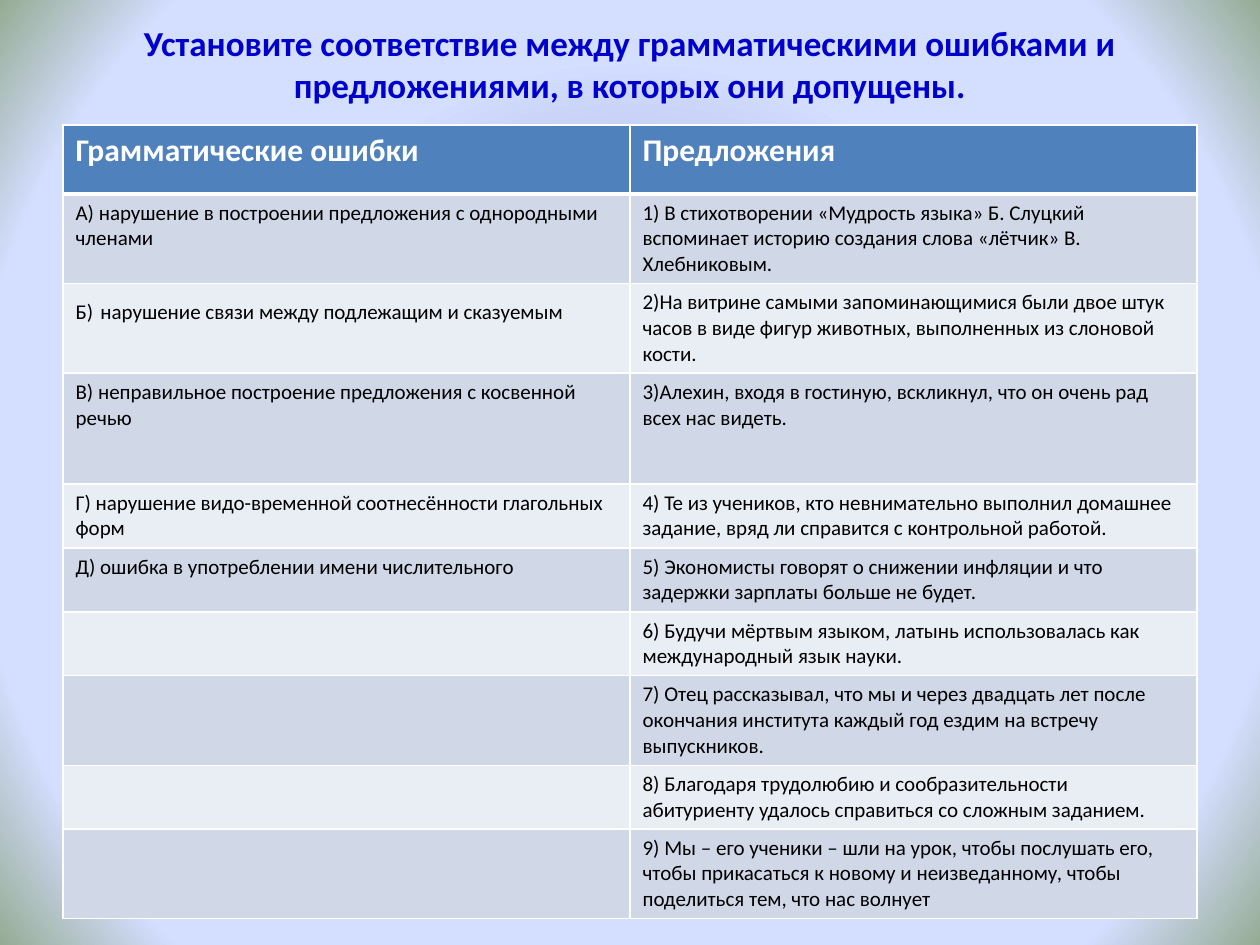
"""Build a matching-exercise slide: grammar errors beside example sentences."""
from dataclasses import dataclass

from lxml.etree import SubElement
from pptx import Presentation
from pptx.dml.color import RGBColor
from pptx.enum.text import MSO_ANCHOR as Anchor, PP_ALIGN as Align
from pptx.oxml import parse_xml
from pptx.oxml.ns import nsdecls, qn
from pptx.util import Pt

FONT = "Calibri"
WHITE, BLACK, BLUE, HEADER_BLUE = "FFFFFF", "000000", "0000CC", "4F81BD"
BANDS = ("D0D8E8", "E9EDF4")
THREE_LINES, TWO_LINES = 51.2, 36.5


@dataclass(frozen=True)
class Style:
    size: float
    color: str
    bold: bool = False


@dataclass(frozen=True)
class Match:
    error: tuple[str, ...]
    sentence: str
    height: float


TITLE = Style(20, BLUE, True)
HEADING = Style(18, WHITE, True)
BODY = Style(12, BLACK)
WIDE_SPACE = Style(18, BLACK)

MATCHES = (
    Match(("А) нарушение в построении предложения с однородными членами",),
          "1) В стихотворении «Мудрость языка» Б. Слуцкий вспоминает историю "
          "создания слова «лётчик» В. Хлебниковым.", THREE_LINES),
    Match(("Б)", " ", "нарушение связи между подлежащим и сказуемым"),
          "2)На витрине самыми запоминающимися были двое штук часов в виде "
          "фигур животных, выполненных из слоновой кости.", THREE_LINES),
    Match(("В) неправильное построение предложения с косвенной речью",),
          "3)Алехин, входя в гостиную, вскликнул, что он очень рад всех нас "
          "видеть.", 63.4),
    Match(("Г) нарушение видо-временной соотнесённости глагольных форм",),
          "4) Те из учеников, кто невнимательно выполнил домашнее задание, "
          "вряд ли справится с контрольной работой.", TWO_LINES),
    Match(("Д) ошибка в употреблении имени числительного",),
          "5) Экономисты говорят о снижении инфляции и что задержки зарплаты "
          "больше не будет.", TWO_LINES),
    Match((), "6) Будучи мёртвым языком, латынь использовалась как "
          "международный язык науки.", TWO_LINES),
    Match((), "7) Отец рассказывал, что мы и через двадцать лет после "
          "окончания института каждый год ездим на встречу выпускников.",
          THREE_LINES),
    Match((), "8) Благодаря трудолюбию и сообразительности абитуриенту "
          "удалось справиться со сложным заданием.", TWO_LINES),
    Match((), "9) Мы – его ученики – шли на урок, чтобы послушать его, чтобы "
          "прикасаться к новому и неизведанному, чтобы поделиться тем, что "
          "нас волнует", THREE_LINES),
)


def rgb(color: str) -> RGBColor:
    return RGBColor.from_string(color)


def add_run(paragraph, text: str, style: Style) -> None:
    run = paragraph.add_run()
    run.text = text
    run.font.name = FONT
    run.font.size = Pt(style.size)
    run.font.bold = style.bold
    run.font.color.rgb = rgb(style.color)


def paint_background(slide) -> None:
    stops = ((0, "8488C4", 72), (53, "D4DEFF", 100),
             (83, "D4DEFF", 100), (100, "96AB94", 100))
    stop_xml = "".join(
        f'<a:gs pos="{pos * 1000}"><a:srgbClr val="{color}">'
        f'<a:alpha val="{alpha * 1000}"/></a:srgbClr></a:gs>'
        for pos, color, alpha in stops)
    background = parse_xml(
        f'<p:bg {nsdecls("p", "a")}><p:bgPr><a:gradFill rotWithShape="1">'
        f'<a:gsLst>{stop_xml}</a:gsLst><a:path path="circle">'
        '<a:fillToRect l="50000" t="50000" r="50000" b="50000"/></a:path>'
        '</a:gradFill><a:effectLst/></p:bgPr></p:bg>')
    slide.element.cSld.insert(0, background)


def add_title(slide) -> None:
    box = slide.shapes.add_textbox(Pt(36), Pt(21.6), Pt(648), Pt(49.7))
    frame = box.text_frame
    frame.word_wrap = True
    frame.vertical_anchor = Anchor.MIDDLE
    frame.margin_bottom = Pt(24)
    heading = frame.paragraphs[0]
    heading.alignment = Align.CENTER
    add_run(heading, "Установите соответствие между грамматическими ошибками "
                     "и предложениями, в которых они допущены.", TITLE)


def set_border(cell, side: str, width: float) -> None:
    line = SubElement(cell._tc.get_or_add_tcPr(), qn(f"a:ln{side}"),
                      w=str(Pt(width)))
    solid = SubElement(line, qn("a:solidFill"))
    SubElement(solid, qn("a:srgbClr"), val=WHITE)


def format_cell(cell, fill: str, top: float = 1, bottom: float = 1) -> None:
    for side, width in (("L", 1), ("R", 1), ("T", top), ("B", bottom)):
        set_border(cell, side, width)
    cell.fill.solid()
    cell.fill.fore_color.rgb = rgb(fill)


def add_matches(slide) -> None:
    heights = [39.6] + [match.height for match in MATCHES]
    table = slide.shapes.add_table(len(heights), 2, Pt(36), Pt(71.3),
                                   Pt(648), Pt(sum(heights))).table
    for row, height in zip(table.rows, heights):
        row.height = Pt(height)
    for column, label in enumerate(("Грамматические ошибки", "Предложения")):
        cell = table.cell(0, column)
        format_cell(cell, HEADER_BLUE, bottom=3)
        add_run(cell.text_frame.paragraphs[0], label, HEADING)
    for index, match in enumerate(MATCHES):
        for column, parts in enumerate((match.error, (match.sentence,))):
            cell = table.cell(index + 1, column)
            format_cell(cell, BANDS[index % 2], top=1 if index else 3)
            for part in parts:
                style = BODY if part.strip() else WIDE_SPACE
                add_run(cell.text_frame.paragraphs[0], part, style)


def main() -> None:
    deck = Presentation()
    deck.slide_width, deck.slide_height = Pt(720), Pt(540)
    slide = deck.slides.add_slide(deck.slide_layouts[6])
    paint_background(slide)
    add_title(slide)
    add_matches(slide)
    deck.save("out.pptx")


if __name__ == "__main__":
    main()
